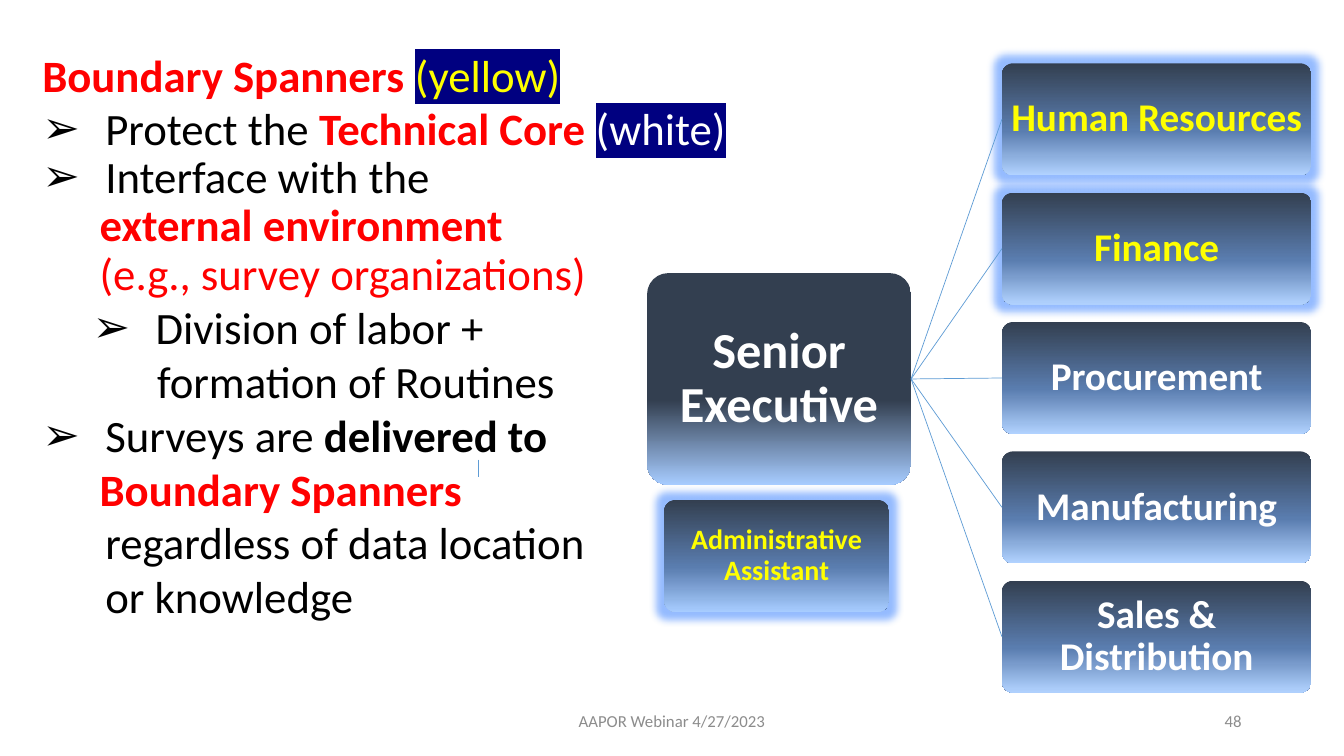
"""Build the boundary spanners slide with its organization chart."""
from copy import deepcopy

from lxml.etree import SubElement
from pptx import Presentation
from pptx.dml.color import RGBColor
from pptx.enum.shapes import MSO_CONNECTOR, MSO_SHAPE
from pptx.enum.text import MSO_ANCHOR, MSO_AUTO_SIZE, PP_ALIGN
from pptx.oxml.ns import qn
from pptx.util import Pt

RED = RGBColor(0xFF, 0x00, 0x00)
BLACK = RGBColor(0x00, 0x00, 0x00)
WHITE = RGBColor(0xFF, 0xFF, 0xFF)
YELLOW = RGBColor(0xFF, 0xFF, 0x00)
NAVY = RGBColor(0x00, 0x00, 0x80)
GRAY = RGBColor(0x8C, 0x8C, 0x8C)
LINE = RGBColor(0x5F, 0x9C, 0xD5)
GLOW = RGBColor(0x4F, 0x8F, 0xFF)
DARK = RGBColor(0x33, 0x3F, 0x50)
STEEL = RGBColor(0x5A, 0x7D, 0xAF)
PALE = RGBColor(0xB1, 0xD2, 0xFF)
SKY = RGBColor(0xA7, 0xCC, 0xFF)
FONT = "Calibri"

# Each line: level, left margin, bullet, line spacing, runs of (text, colour, bold, highlight)
LINES = [
    (0, 0, False, 1, [("Boundary Spanners ", RED, True, None),
                      ("(yellow)", YELLOW, False, NAVY)]),
    (0, 45, True, 1, [("Protect the", BLACK, False, None),
                      (" Technical Core ", RED, True, None),
                      ("(white)", WHITE, False, NAVY)]),
    (0, 45, True, 0.9, [("Interface with the", BLACK, False, None)]),
    (0, 41, False, 0.9, [("external environment", RED, True, None)]),
    (0, 41, False, 0.9, [("(e.g., survey organizations)", RED, False, None)]),
    (1, 81, True, 1, [("Division of labor +", BLACK, False, None)]),
    (0, 82, False, 1, [("formation of Routines", BLACK, False, None)]),
    (0, 45, True, 1, [("Surveys are ", BLACK, False, None),
                      ("delivered to", BLACK, True, None)]),
    (0, 41, False, 1, [("Boundary Spanners", RED, True, None)]),
    (0, 45, False, 1, [("regardless of data location", BLACK, False, None)]),
    (0, 45, False, 1, [("or knowledge", BLACK, False, None)]),
]
UNITS = [("Human Resources", True), ("Finance", True), ("Procurement", False),
         ("Manufacturing", False), ("Sales & Distribution", False)]
NOTES = [("AAPOR Webinar 4/27/2023", 318, 324, PP_ALIGN.CENTER),
         ("48", 678, 216, PP_ALIGN.RIGHT)]
UNIT_TOP, UNIT_STEP = 45.2, 92.4


def place(shape, left, top, width, height):
    """Set the frame of a shape in points."""
    shape.left, shape.top = Pt(left), Pt(top)
    shape.width, shape.height = Pt(width), Pt(height)


def add_run(para, text, size, color, bold=False, mark=None):
    """Append one formatted run to a paragraph."""
    run = para.add_run()
    run.text = text
    font = run.font
    font.name, font.size, font.bold = FONT, Pt(size), bold
    font.color.rgb = color
    if mark:
        props = run._r.get_or_add_rPr()
        high = SubElement(props, qn("a:highlight"))
        SubElement(high, qn("a:srgbClr"), val=str(mark))
        props.find(qn("a:solidFill")).addnext(high)


def add_list(body):
    """Fill the body placeholder with the text lines."""
    frame = body.text_frame
    frame.word_wrap = True
    frame.auto_size = MSO_AUTO_SIZE.NONE
    for i, (level, left, bullet, space, runs) in enumerate(LINES):
        para = frame.add_paragraph() if i else frame.paragraphs[0]
        para.level, para.line_spacing = level, space
        para.space_before = para.space_after = Pt(0)
        props = para._p.get_or_add_pPr()
        props.set("marL", str(Pt(left)))
        props.set("indent", str(Pt(-45 if bullet else 0)))
        if bullet:
            SubElement(props, qn("a:buChar"), char="➢")
        else:
            SubElement(props, qn("a:buNone"))
        for text, color, bold, mark in runs:
            add_run(para, text, 32, color, bold, mark)


def add_box(shapes, text, rect, size, colors, glow):
    """Add one chart box with a vertical gradient and an optional glow."""
    box = shapes.add_shape(MSO_SHAPE.ROUNDED_RECTANGLE, *map(Pt, rect))
    box.adjustments[0] = 0.1
    box.shadow.inherit = False
    box.line.fill.background()
    box.fill.gradient()
    box.fill.gradient_angle = 270
    first = box._element.spPr.find(".//" + qn("a:gs"))
    first.addnext(deepcopy(first))
    for stop, color, pos in zip(box.fill.gradient_stops, colors, (0, 0.6, 1)):
        stop.color.rgb, stop.position = color, pos
    if glow:
        effect = box._element.spPr.find(qn("a:effectLst"))
        halo = SubElement(effect, qn("a:glow"), rad=str(Pt(11)))
        tint = SubElement(halo, qn("a:srgbClr"), val=str(GLOW))
        SubElement(tint, qn("a:alpha"), val="60000")
    frame = box.text_frame
    frame.word_wrap = True
    frame.vertical_anchor = MSO_ANCHOR.MIDDLE
    frame.margin_left = frame.margin_right = Pt(1.5)
    frame.margin_top = frame.margin_bottom = Pt(1.5)
    para = frame.paragraphs[0]
    para.alignment, para.line_spacing = PP_ALIGN.CENTER, 0.9
    add_run(para, text, size, YELLOW if glow else WHITE, True)
    return box


def add_line(shapes, *ends):
    """Add one thin straight line."""
    line = shapes.add_connector(MSO_CONNECTOR.STRAIGHT, *map(Pt, ends))
    line.line.color.rgb, line.line.width = LINE, Pt(0.5)
    SubElement(line._element.spPr, qn("a:effectLst"))
    return line


def main():
    """Build and save the slide."""
    deck = Presentation()
    deck.slide_width, deck.slide_height = Pt(960), Pt(540)
    slide = deck.slides.add_slide(deck.slide_layouts[1])
    shapes = slide.shapes
    title = shapes.title.element
    title.getparent().remove(title)
    body = slide.placeholders[1]
    place(body, 23, 30.2, 600, 466)
    add_list(body)

    head = add_box(shapes, "Senior Executive", (462.2, 195.1, 188.6, 151.2),
                   36, (DARK, DARK, SKY), False)
    for i, (name, glow) in enumerate(UNITS):
        rect = (715.7, UNIT_TOP + i * UNIT_STEP, 221, 80)
        unit = add_box(shapes, name, rect, 28, (DARK, STEEL, PALE), glow)
        link = add_line(shapes, 0, 0, 1, 1)
        link.begin_connect(head, 3)
        link.end_connect(unit, 1)
    add_box(shapes, "Administrative Assistant", (474.5, 357.1, 160.5, 80),
            20, (DARK, STEEL, SKY), True)
    add_line(shapes, 342, 328.3, 342, 340.6)

    for text, left, width, align in NOTES:
        note = shapes.add_textbox(Pt(left), Pt(500.5), Pt(width), Pt(28.8))
        frame = note.text_frame
        frame.word_wrap = True
        frame.vertical_anchor = MSO_ANCHOR.MIDDLE
        frame.paragraphs[0].alignment = align
        add_run(frame.paragraphs[0], text, 12, GRAY)
    deck.save("out.pptx")


if __name__ == "__main__":
    main()
